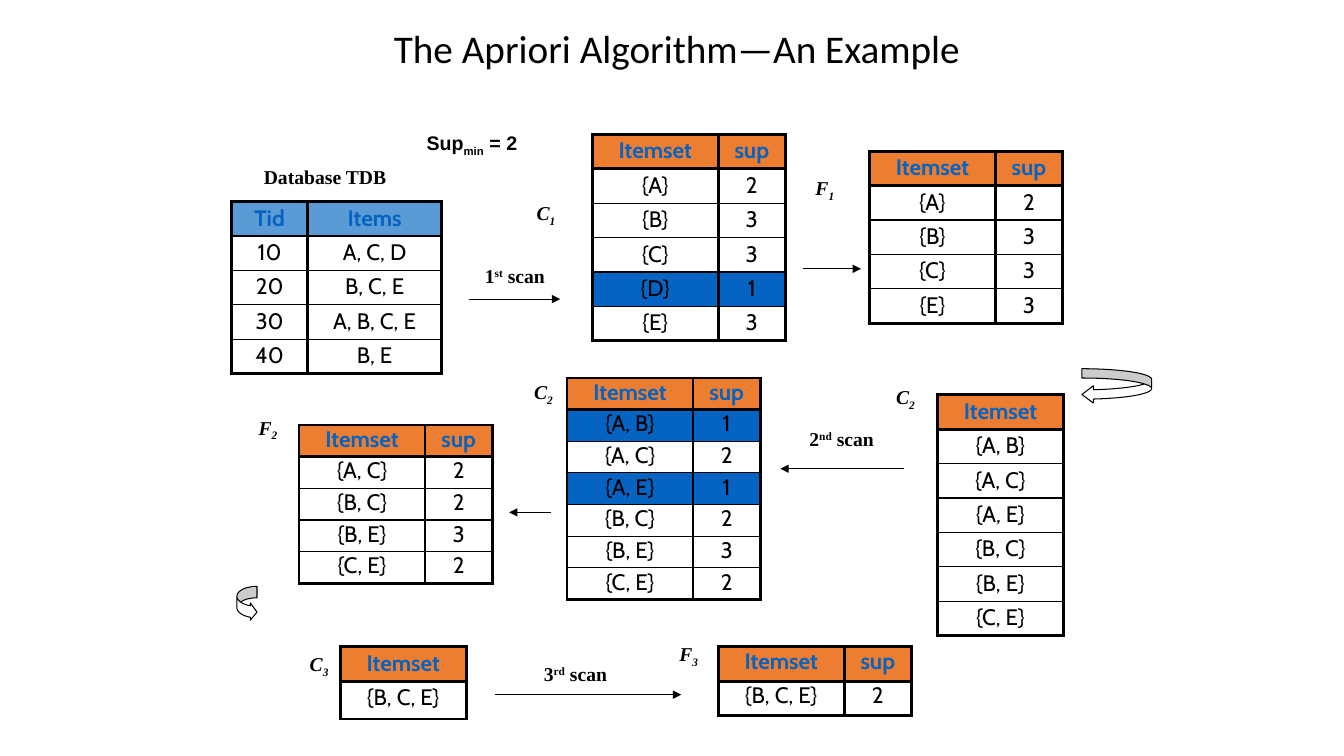
from lxml import etree
from pptx import Presentation, util as u
from pptx.dml.color import RGBColor
from pptx.enum import shapes, text
from pptx.oxml.ns import qn

COLORS = {"black": "000000", "white": "FFFFFF", "blue": "0563C1",
          "orange": "ED7D31", "sky": "5B9BD5"}
COLS, ROWS = 160, 90  # grid units per slide width and height
ROW, TIGHT_ROW = 4.1, 3.75  # table row heights in grid rows


def rgb(name):
    return RGBColor.from_string(COLORS[name])


def write(tf, content, font, size=14, color="black", bold=False, italic=False,
          shift=0, align="CENTER", line=None, before=None):
    """Write one paragraph; pieces between | marks get the baseline shift."""
    p = tf.paragraphs[0]
    p.alignment = getattr(text.PP_ALIGN, align)
    if line:
        p.line_spacing = line
    if before is not None:  # space before, in percent of the line
        p.space_before = u.Pt(0)
        spacing = p._p.pPr.find(qn("a:spcBef"))
        spacing.remove(spacing[0])
        etree.SubElement(spacing, qn("a:spcPct"), val=str(before * 1000))
    for i, piece in enumerate(content.split("|")):
        r = p.add_run()
        r.text = piece
        f = r.font
        f.name, f.size, f.bold, f.italic = font, u.Pt(size), bold, italic
        f.color.rgb = rgb(color)
        if i % 2:
            r._r.get_or_add_rPr().set("baseline", str(shift * 1000))


class Board:
    label_font, cell_font = "Times New Roman", "Cabin"
    thick, thin, hairline = 2.25, 1, 0.75

    def __init__(self, prs):
        self.col, self.row = prs.slide_width / COLS, prs.slide_height / ROWS
        self.s = prs.slides.add_slide(prs.slide_layouts[5])

    def box(self, x, y, w, h):
        return [round(v) for v in (x * self.col, y * self.row,
                                   w * self.col, h * self.row)]

    def title(self, content, *at):
        sp = self.s.shapes.title
        sp.left, sp.top, sp.width, sp.height = self.box(*at)
        sp.text_frame.vertical_anchor = text.MSO_ANCHOR.MIDDLE
        write(sp.text_frame, content, "Calibri", size=28, line=0.9)

    def label(self, content, x, y, w=4.8, wrap=False, font=label_font, **fmt):
        tf = self.s.shapes.add_textbox(*self.box(x, y, w, ROW)).text_frame
        tf.word_wrap = wrap
        tf.auto_size = text.MSO_AUTO_SIZE.SHAPE_TO_FIT_TEXT
        tf.vertical_anchor = text.MSO_ANCHOR.TOP if wrap else text.MSO_ANCHOR.MIDDLE
        write(tf, content, font, bold=True, **fmt)

    def arrow(self, x1, x2, y):
        c = self.s.shapes.add_connector(shapes.MSO_CONNECTOR.STRAIGHT,
                                        *self.box(x1, y, x2, y))
        c.line.color.rgb, c.line.width = rgb("black"), u.Pt(self.hairline)
        etree.SubElement(c.line._get_or_add_ln(), qn("a:tailEnd"), type="triangle")
        etree.SubElement(c._element.spPr, qn("a:effectLst"))

    def curved_arrow(self, kind, at, adjustments):
        sp = self.s.shapes.add_shape(kind, *self.box(*at))
        for i, value in enumerate(adjustments):
            sp.adjustments[i] = value
        sp.shadow.inherit = False
        sp.fill.solid()
        sp.fill.fore_color.rgb = rgb("white")
        sp.line.color.rgb, sp.line.width = rgb("black"), u.Pt(self.hairline)

    def borders(self, cell, top, bottom):
        tc_pr = cell._tc.get_or_add_tcPr()
        widths = {"lnL": self.thick, "lnR": self.thick, "lnT": top, "lnB": bottom}
        for i, (side, width) in enumerate(widths.items()):
            ln = etree.Element(qn("a:" + side), w=str(u.Pt(width)))
            fill = etree.SubElement(ln, qn("a:solidFill"))
            etree.SubElement(fill, qn("a:srgbClr"), val=COLORS["black"])
            tc_pr.insert(i, ln)

    def table(self, x, y, data, widths=(15, 8), height=ROW, last=None,
              head="orange", line=0.9, dropped=()):
        n, widths = len(data), widths[:len(data[0])]
        heights = [height] * (n - 1) + [last or height]
        t = self.s.shapes.add_table(
            n, len(widths), *self.box(x, y, sum(widths), sum(heights))).table
        t.first_row = t.horz_banding = False
        for column, w in zip(t.columns, widths):
            column.width = round(w * self.col)
        for i, values in enumerate(data):
            t.rows[i].height = round(heights[i] * self.row)
            fill = head if i == 0 else "blue" if i in dropped else None
            for j, value in enumerate(values):
                cell = t.cell(i, j)
                if fill:
                    cell.fill.solid()
                    cell.fill.fore_color.rgb = rgb(fill)
                else:
                    cell.fill.background()
                self.borders(cell, self.thick if i < 2 else self.thin,
                             self.thick if i in (0, n - 1) else self.thin)
                write(cell.text_frame, value, self.cell_font, size=16,
                      color="black" if i else "blue", bold=i == 0,
                      line=line, before=20)


def itemsets(names, supports=""):
    """Rows for itemsets such as "AB", with one support digit for each."""
    rows = [["{" + ", ".join(name) + "}"] for name in names.split()]
    if not supports:
        return [["Itemset"]] + rows
    return [["Itemset", "sup"]] + [row + [n] for row, n in zip(rows, supports)]


def main():
    prs = Presentation()
    prs.slide_width, prs.slide_height = u.Inches(40 / 3), u.Inches(7.5)
    b = Board(prs)
    b.title("The Apriori Algorithm—An Example ", 30, 2, 102.2, 8)

    # Captions of the database and the scans
    b.label("Database TDB", 30.1, 19, 17.2)
    for caption, x, y, w in (("1|st| scan", 56.4, 30.8, 9.8),
                             ("2|nd| scan", 95, 50.2, 10.4),
                             ("3|rd| scan", 63.4, 78.1, 10.2)):
        b.label(caption, x, y, w, shift=30)

    # Names of the candidate and frequent sets
    for name, x, y in (("C|1", 62.6, 23.5), ("F|1", 95.8, 20.5),
                       ("F|2", 29.5, 49), ("C|2", 62.3, 44.8),
                       ("C|2", 105.4, 45.4), ("C|3", 35.6, 77.2),
                       ("F|3", 79.6, 76)):
        b.label(name, x, y, italic=True, shift=-25)

    # Flow between the tables
    for x1, x2, y in ((55.8, 66.7, 35.6), (95.6, 102.5, 32), (107.6, 92.9, 55.8),
                      (65.6, 60.6, 61), (58.9, 81.1, 82.7)):
        b.arrow(x1, x2, y)
    b.curved_arrow(shapes.MSO_SHAPE.CURVED_LEFT_ARROW,
                   (128.8, 43.9, 8.3, ROW), (0.27, 0.55, 0.33))
    b.curved_arrow(shapes.MSO_SHAPE.CURVED_RIGHT_ARROW,
                   (28.2, 69.8, 2.4, ROW), (0.57, 1.13, 0.33))

    # Database
    b.table(27.6, 24, [["Tid", "Items"], ["10", "A, C, D"], ["20", "B, C, E"],
                       ["30", "A, B, C, E"], ["40", "B, E"]],
            widths=(9, 16), head="sky")

    # First scan
    b.table(70.5, 16, itemsets("A B C D E", "23313"), dropped=(4,))
    b.table(103.5, 18, itemsets("A B C E", "2333"))

    # Second scan
    pairs = "AB AC AE BC BE CE"
    b.table(111.6, 47, itemsets(pairs))
    b.table(67.5, 45, itemsets(pairs, "121232"), height=TIGHT_ROW, line=0.8,
            dropped=(1, 3))
    b.table(35.6, 50.6, itemsets("AC BC BE CE", "2232"), height=TIGHT_ROW, line=0.8)

    # Third scan
    b.table(40.5, 77, itemsets("BCE"), last=4.5)
    b.table(85.5, 77, itemsets("BCE", "2"), line=0.8)

    # Minimum support
    b.label("Sup|min| = 2", 49.6, 15, 23, wrap=True, font="Arial", shift=-25,
            align="LEFT", before=50)
    prs.save("out.pptx")


if __name__ == "__main__":
    main()
